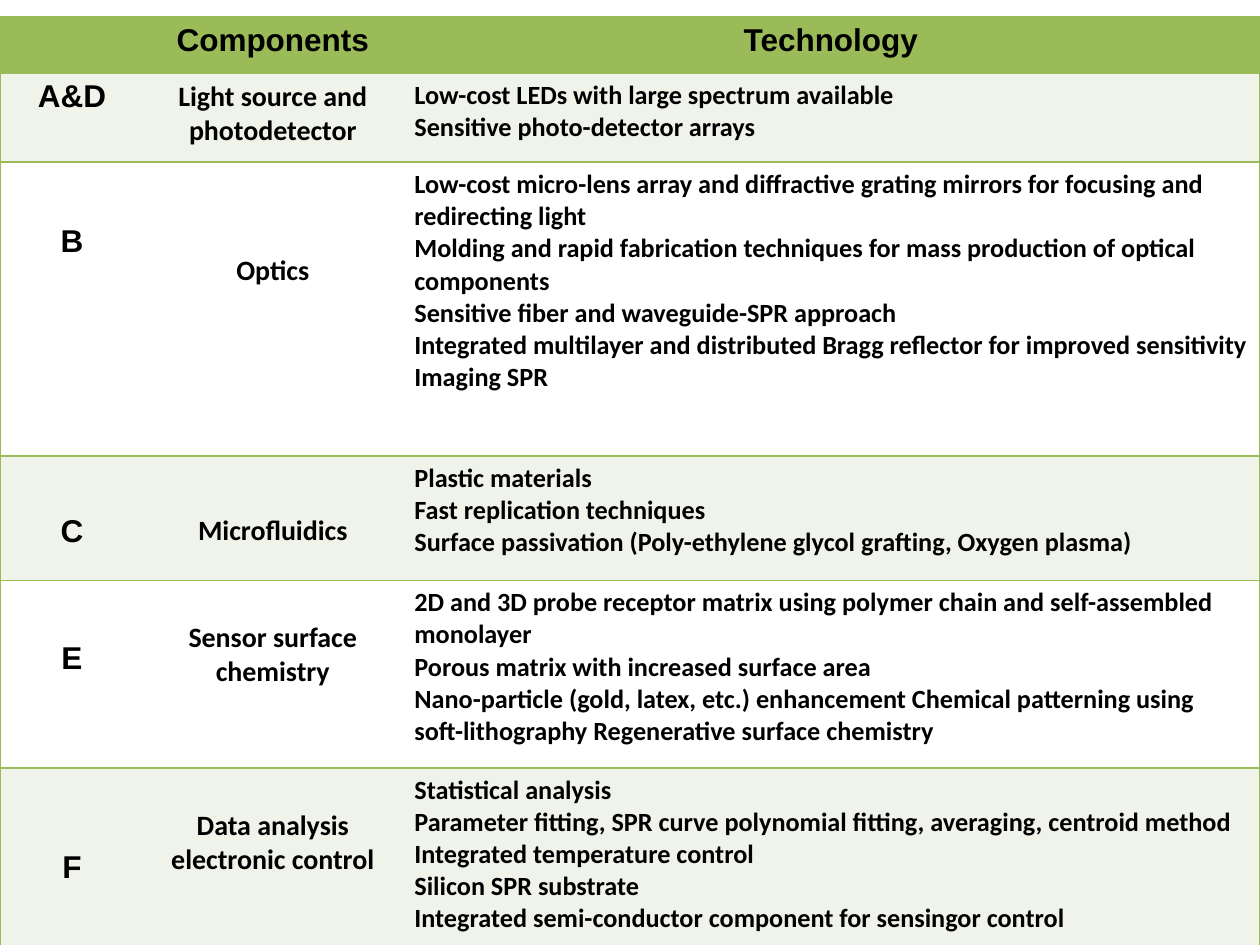
"""Build the slide listing sensor components and their technologies."""
from dataclasses import dataclass

from lxml.etree import SubElement
from pptx import Presentation
from pptx.dml.color import RGBColor
from pptx.enum.text import PP_ALIGN as Align
from pptx.oxml.ns import qn
from pptx.util import Cm, Pt


@dataclass(frozen=True)
class Theme:
    """Colours and type sizes of the slide."""
    green: str = "9BBB59"
    tint: str = "EFF3EA"
    white: str = "FFFFFF"
    ink: str = "000000"
    border_pt: float = 1


@dataclass(frozen=True)
class TextStyle:
    """Typeface, size and alignment of a kind of cell."""
    font: str
    size: float
    align: Align


@dataclass(frozen=True)
class Entry:
    """One component with its technologies and the top offsets of its labels in cm."""
    letter: str
    component: str
    technologies: tuple[str, ...]
    height: float
    letter_top: float = 0.13
    component_top: float = 0.13


THEME = Theme()
HEADING = TextStyle("Arial", 18, Align.CENTER)
COMPONENT = TextStyle("Calibri", 16, Align.CENTER)
TECHNOLOGY = TextStyle("Calibri", 15, Align.LEFT)
COLUMN_WIDTHS = (2.9, 5.2, 17.3)
TABLE_TOP = 0.33
HEADER_HEIGHT = 1.14
CELL_TOP = 0.13

ENTRIES = (
    Entry("A&D", "Light source and photodetector", (
        "Low-cost LEDs with large spectrum available",
        "Sensitive photo-detector arrays",
    ), 1.8),
    Entry("B", "Optics", (
        "Low-cost micro-lens array and diffractive grating mirrors for focusing and redirecting light",
        "Molding and rapid fabrication techniques for mass production of optical components",
        "Sensitive fiber and waveguide-SPR approach",
        "Integrated multilayer and distributed Bragg reflector for improved sensitivity",
        "Imaging SPR",
    ), 5.92, 1.25, 1.85),
    Entry("C", "Microfluidics", (
        "Plastic materials",
        "Fast replication techniques",
        "Surface passivation (Poly-ethylene glycol grafting, Oxygen plasma)",
    ), 2.51, 1.17, 1.17),
    Entry("E", "Sensor surface chemistry", (
        "2D and 3D probe receptor matrix using polymer chain and self-assembled monolayer",
        "Porous matrix with increased surface area",
        "Nano-particle (gold, latex, etc.) enhancement Chemical patterning using "
        "soft-lithography Regenerative surface chemistry",
    ), 3.78, 1.23, 0.82),
    Entry("F", "Data analysis electronic control", (
        "Statistical analysis",
        "Parameter fitting, SPR curve polynomial fitting, averaging, centroid method",
        "Integrated temperature control",
        "Silicon SPR substrate",
        "Integrated semi-conductor component for sensingor control",
    ), 3.58, 1.65, 0.82),
)


def draw_borders(cell, column: int) -> None:
    """Rule the cell above and below, and on the outer sides of the table."""
    properties = cell._tc.get_or_add_tcPr()
    sides = {"L": column == 0, "R": column == len(COLUMN_WIDTHS) - 1, "T": True, "B": True}
    for side, visible in sides.items():
        line = SubElement(properties, qn(f"a:ln{side}"), w=str(Pt(THEME.border_pt)))
        if visible:
            fill = SubElement(line, qn("a:solidFill"))
            SubElement(fill, qn("a:srgbClr"), val=THEME.green)
        else:
            SubElement(line, qn("a:noFill"))


def write_cell(cell, text: str, style: TextStyle, top: float = CELL_TOP) -> None:
    """Write the text of a cell, starting at the given distance from its top."""
    cell.margin_top = Cm(top)
    cell.text_frame.text = text
    for paragraph in cell.text_frame.paragraphs:
        paragraph.alignment = style.align
        paragraph.font.size = Pt(style.size)
        for run in paragraph.runs:
            run.font.name = style.font
            run.font.size = Pt(style.size)
            run.font.bold = True
            run.font.color.rgb = RGBColor.from_string(THEME.ink)


def paint_row(table, row: int, colour: str) -> None:
    """Border and fill every cell of a row."""
    for column, cell in enumerate(table.rows[row].cells):
        draw_borders(cell, column)
        cell.fill.solid()
        cell.fill.fore_color.rgb = RGBColor.from_string(colour)


def draw_table(slide) -> None:
    """Draw the table of components and technologies."""
    heights = (HEADER_HEIGHT, *(entry.height for entry in ENTRIES))
    table = slide.shapes.add_table(
        len(heights), len(COLUMN_WIDTHS), Cm(0), Cm(TABLE_TOP),
        Cm(sum(COLUMN_WIDTHS)), Cm(sum(heights)),
    ).table
    for column, width in zip(table.columns, COLUMN_WIDTHS):
        column.width = Cm(width)
    for row, height in zip(table.rows, heights):
        row.height = Cm(height)

    paint_row(table, 0, THEME.green)
    for column, heading in enumerate(("", "Components", "Technology")):
        write_cell(table.cell(0, column), heading, HEADING)
    for row, entry in enumerate(ENTRIES, start=1):
        paint_row(table, row, THEME.tint if row % 2 else THEME.white)
        write_cell(table.cell(row, 0), entry.letter, HEADING, entry.letter_top)
        write_cell(table.cell(row, 1), entry.component, COMPONENT, entry.component_top)
        write_cell(table.cell(row, 2), "\n".join(entry.technologies), TECHNOLOGY)


def main() -> None:
    """Create and save the presentation."""
    presentation = Presentation()
    presentation.slide_width, presentation.slide_height = Cm(25.4), Cm(19.05)
    draw_table(presentation.slides.add_slide(presentation.slide_layouts[6]))
    presentation.save("out.pptx")


if __name__ == "__main__":
    main()
